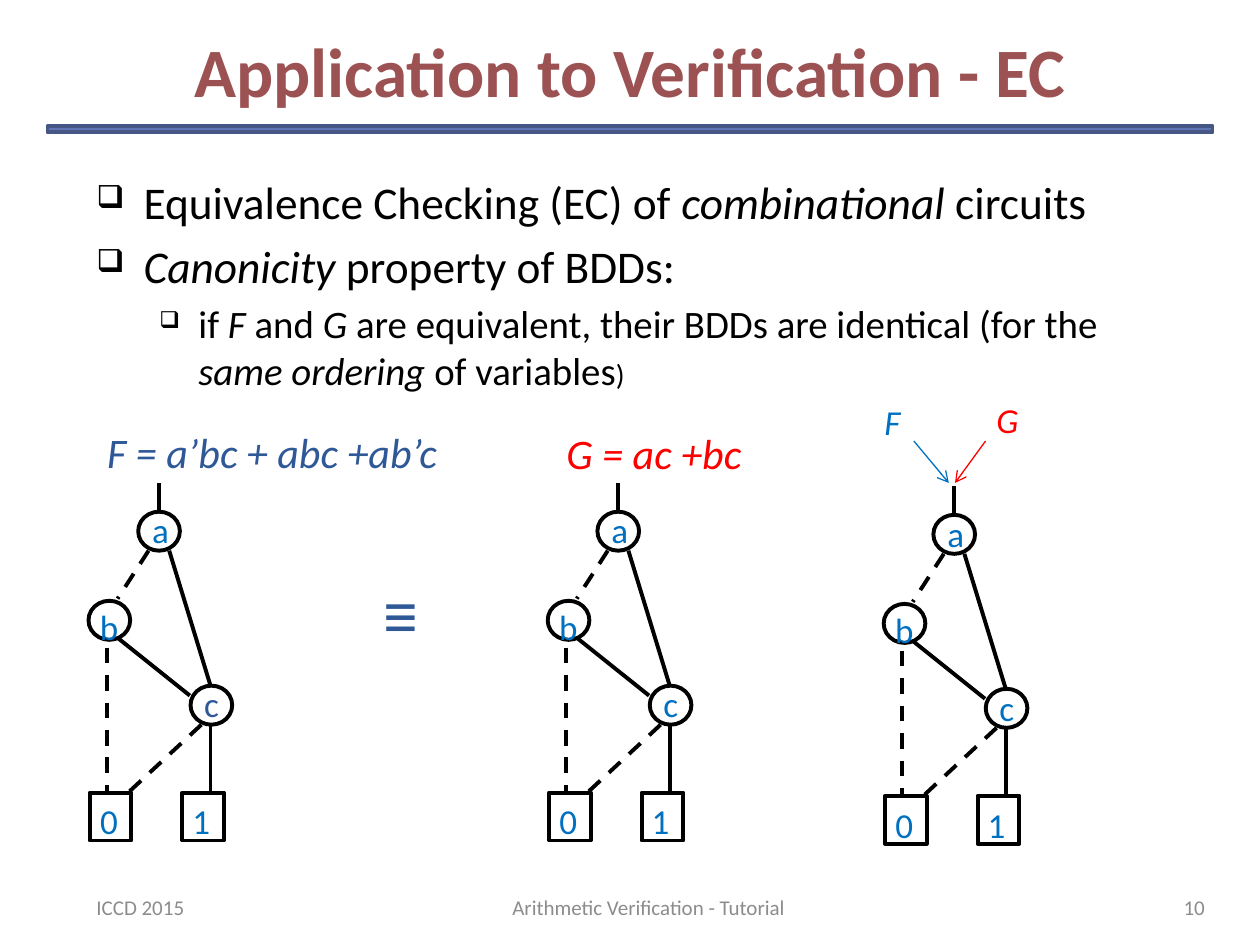
import pptx
import pptx.dml.color
import pptx.enum.dml
import pptx.enum.shapes
import pptx.enum.text
import pptx.oxml.ns
import pptx.util
from lxml import etree

Pt = pptx.util.Pt
SHAPE = pptx.enum.shapes.MSO_SHAPE
ALIGN = pptx.enum.text.PP_ALIGN
ANCHOR = pptx.enum.text.MSO_ANCHOR
DASH = pptx.enum.dml.MSO_LINE.DASH
qn = pptx.oxml.ns.qn

COLORS = {
    "title": "9C5252", "rule": "6076B4", "rule_edge": "475785",
    "black": "000000", "blue": "0070C0", "navy": "2F5897",
    "red": "FF0000", "grey": "8C8C8C",
}

# Graph layout, in points from the top left corner of a graph
NODE_W, NODE_H, LEAF_H = 23.8, 22.3, 27.4
LEAF_Y = 177.1
LABEL_W, LABEL_H = 25.2, 28.8
NODES = [  # label, shape, outline position, label position
    ("1", SHAPE.RECTANGLE, (54.6, LEAF_Y), (52.7, 177.8)),
    ("0", SHAPE.RECTANGLE, (1.6, LEAF_Y), (0, 177.8)),
    ("a", SHAPE.OVAL, (29.3, 16.6), (29.5, 11.5)),
    ("b", SHAPE.OVAL, (0.9, 67.5), (0, 66.4)),
    ("c", SHAPE.OVAL, (59.2, 116), (58.6, 110.9)),
]
EDGES = [  # start, end, dashed
    ((11.5, 94.3), (11.5, LEAF_Y), True),
    ((17.4, 88.6), (58.8, 121.7), False),
    ((65.4, 138.3), (23.6, LEAF_Y), True),
    ((41.2, 16.6), (41.2, 0), False),
    ((70.6, 138.3), (70.6, LEAF_Y), False),
    ((47, 38.9), (70.6, 116), False),
    ((35.2, 38.9), (17.5, 66.3), True),
]


def rgb(name):
    return pptx.dml.color.RGBColor.from_string(COLORS[name])


def add_run(p, text, size=20, color="black", bold=False, italic=False):
    r = p.add_run()
    r.text = text
    r.font.name = "Calibri"
    r.font.size = Pt(size)
    r.font.bold = bold
    r.font.italic = italic
    r.font.color.rgb = rgb(color)


def add_text(slide, box, text="", align=ALIGN.CENTER, anchor=ANCHOR.TOP,
             wrap=True, **fmt):
    sp = slide.shapes.add_textbox(*map(Pt, box))
    tf = sp.text_frame
    tf.word_wrap = wrap
    tf.vertical_anchor = anchor
    p = tf.paragraphs[0]
    p.alignment = align
    if text:
        add_run(p, text, **fmt)
    return tf


def add_outline(slide, kind, box, line="black", width=2.25, fill=None):
    sp = slide.shapes.add_shape(kind, *map(Pt, box))
    sp.shadow.inherit = False
    if fill:
        sp.fill.solid()
        sp.fill.fore_color.rgb = rgb(fill)
    else:
        sp.fill.background()
    sp.line.color.rgb = rgb(line)
    sp.line.width = Pt(width)


def add_line(slide, start, end, color="black", width=2.25, dashed=False,
             arrow=False):
    cxn = slide.shapes.add_connector(
        pptx.enum.shapes.MSO_CONNECTOR.STRAIGHT, *map(Pt, (*start, *end)))
    cxn.line.color.rgb = rgb(color)
    cxn.line.width = Pt(width)
    if dashed:
        cxn.line.dash_style = DASH.DASH
    if arrow:
        etree.SubElement(cxn.line._get_or_add_ln(), qn("a:tailEnd"), type="arrow")
    etree.SubElement(cxn._element.spPr, qn("a:effectLst"))


def set_bullet(p, left, hanging, percent):
    pPr = p._p.get_or_add_pPr()
    pPr.set("marL", str(Pt(left)))
    pPr.set("indent", str(-Pt(hanging)))
    etree.SubElement(pPr, qn("a:buSzPct"), val=str(percent * 1000))
    etree.SubElement(pPr, qn("a:buChar"), char="❑")


def draw_header(slide, x, y, w):
    add_outline(slide, SHAPE.RECTANGLE, (x, y + 60, w, 3.6),
                line="rule_edge", width=2, fill="rule")
    add_text(slide, (x + 27, y, w - 54, 56), "Application to Verification - EC",
             anchor=ANCHOR.MIDDLE, size=39.6, color="title", bold=True)


def draw_body(slide, x, y, w, h):
    # Odd runs of each paragraph are italic
    top = dict(size=25.9, left=27, hanging=27, percent=70)
    sub = dict(size=22.2, left=58.3, hanging=22.3, percent=60)
    items = [
        (top, ["Equivalence Checking (EC) of ", "combinational", " circuits"]),
        (top, ["", "Canonicity", " property of BDDs:"]),
        (sub, ["if ", "F", " and ", "G",
               " are equivalent, their BDDs are identical (for the ",
               "same ordering ", "of variables"]),
    ]
    tf = add_text(slide, (x, y, w, h), align=ALIGN.LEFT)
    for i, (style, runs) in enumerate(items):
        p = tf.paragraphs[0] if i == 0 else tf.add_paragraph()
        p.level = int(style is sub)
        p.space_before = Pt(round(style["size"] * 0.2, 1))
        set_bullet(p, style["left"], style["hanging"], style["percent"])
        for j, text in enumerate(runs):
            if text:
                add_run(p, text, size=style["size"], italic=j % 2 == 1)
    add_run(p, ")", size=16.6)


def draw_bdd(slide, x, y, c_color="blue"):
    for label, kind, (nx, ny), (tx, ty) in NODES:
        height = LEAF_H if kind == SHAPE.RECTANGLE else NODE_H
        add_outline(slide, kind, (x + nx, y + ny, NODE_W, height))
        add_text(slide, (x + tx, y + ty, LABEL_W, LABEL_H), label, wrap=False,
                 color=c_color if label == "c" else "blue")
    for (x1, y1), (x2, y2), dashed in EDGES:
        add_line(slide, (x + x1, y + y1), (x + x2, y + y2), dashed=dashed)


def draw_roots(slide, x, y):
    # Both functions point at the shared graph
    add_line(slide, (x + 64, y + 27), (x + 46.5, y + 51), "red", 0.75, arrow=True)
    add_line(slide, (x + 23, y + 27), (x + 43, y + 51), "blue", 0.75, arrow=True)
    add_text(slide, (x + 63, y - 1, 31.5, 31.5), "G ", wrap=False,
             color="red", italic=True)
    add_text(slide, (x - 1, y + 0.4, 28, 31.5), "F ", wrap=False,
             color="blue", italic=True)


def draw_footer(slide, x, y, w, h):
    side = 168
    parts = [
        (x, side, "ICCD 2015", ALIGN.LEFT),
        (x + 210, 228, "Arithmetic Verification - Tutorial ", ALIGN.CENTER),
        (x + w - side, side, "10", ALIGN.RIGHT),
    ]
    for left, width, text, align in parts:
        add_text(slide, (left, y, width, h), text, align=align,
                 anchor=ANCHOR.MIDDLE, size=12, color="grey")


def main():
    prs = pptx.Presentation()
    prs.slide_width, prs.slide_height = Pt(720), Pt(540)
    slide = prs.slides.add_slide(prs.slide_layouts[6])

    draw_header(slide, 27, 12, 666)
    draw_body(slide, 48, 96, 612, 144)

    # Formulas and their graphs
    add_text(slide, (42, 240, 226.8, 36), "F = a’bc + abc +ab’c",
             size=24, color="navy", italic=True)
    add_text(slide, (316, 241, 115.2, 36.7), "G = ac +bc", wrap=False,
             size=24, color="red", italic=True)
    draw_bdd(slide, 49.7, 275.8, c_color="navy")
    add_text(slide, (211, 322.6, 36, 55.4), "≡", size=40, color="navy")
    draw_bdd(slide, 312.1, 275.8)

    # Shared graph
    draw_bdd(slide, 504.1, 277.6)
    draw_roots(slide, 499.2, 225)

    draw_footer(slide, 48, 504, 647.5, 28.8)
    prs.save("out.pptx")


if __name__ == "__main__":
    main()
